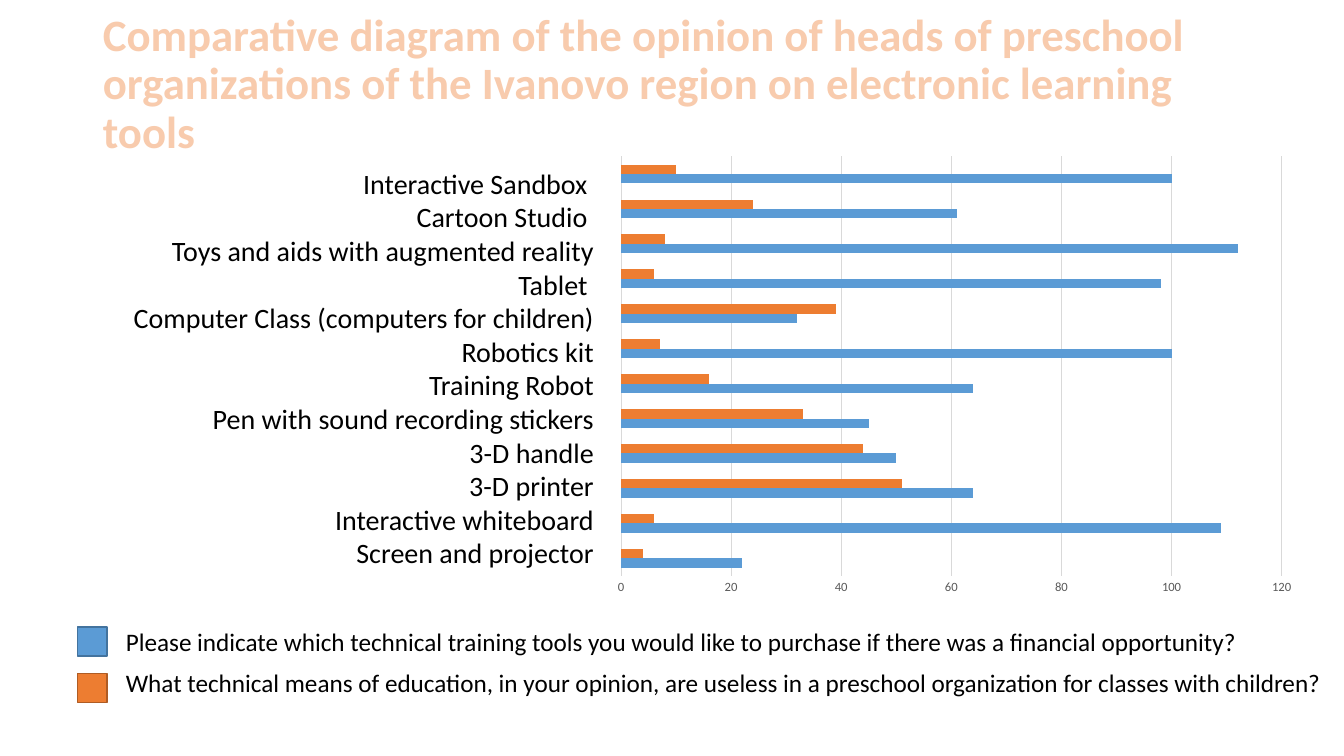
from lxml import etree
from pptx import Presentation
from pptx.chart.data import CategoryChartData
from pptx.dml.color import RGBColor
from pptx.enum.chart import XL_CHART_TYPE, XL_TICK_MARK
from pptx.enum.shapes import MSO_SHAPE
from pptx.enum.text import MSO_ANCHOR, MSO_AUTO_SIZE, PP_ALIGN
from pptx.oxml import parse_xml
from pptx.oxml.ns import nsdecls
from pptx.util import Inches, Pt

BARS = XL_CHART_TYPE.BAR_CLUSTERED
NO_TICKS = XL_TICK_MARK.NONE
SQUARE = MSO_SHAPE.RECTANGLE
MIDDLE = MSO_ANCHOR.MIDDLE
FIXED_SIZE = MSO_AUTO_SIZE.NONE
LEFT, RIGHT = PP_ALIGN.LEFT, PP_ALIGN.RIGHT

FONT = "Calibri"
COLORS = {
    "title": "F8CBAD", "text": "000000", "axis": "595959", "grid": "D9D9D9",
    "wanted": "5B9BD5", "wanted edge": "43739E",
    "useless": "ED7D31", "useless edge": "AF5C24",
}

# Tool, votes to purchase, votes as useless; top row first
TOOLS = [
    ("Interactive Sandbox ", 100, 10),
    ("Cartoon Studio ", 61, 24),
    ("Toys and aids with augmented reality", 112, 8),
    ("Tablet ", 98, 6),
    ("Computer Class (computers for children)", 32, 39),
    ("Robotics kit", 100, 7),
    ("Training Robot", 64, 16),
    ("Pen with sound recording stickers", 45, 33),
    ("3-D handle", 50, 44),
    ("3-D printer", 64, 51),
    ("Interactive whiteboard", 109, 6),
    ("Screen and projector", 22, 4),
]
# Series, question, top of its text, width of its text, top of its square
QUESTIONS = [
    ("wanted", "Please indicate which technical training tools you would like "
     "to purchase if there was a financial opportunity?", 6.16, 11.33, 6.22),
    ("useless", "What technical means of education, in your opinion, are useless "
     "in a preschool organization for classes with children?", 6.57, 12.18, 6.68),
]


def color(name):
    return RGBColor.from_string(COLORS[name])


def add_run(paragraph, text, size, color_name):
    run = paragraph.add_run()
    run.text = text
    run.font.name = FONT
    run.font.size = Pt(size)
    run.font.color.rgb = color(color_name)
    return run


prs = Presentation()
prs.slide_width, prs.slide_height = Inches(13.333), Inches(7.5)
slide = prs.slides.add_slide(prs.slide_layouts[5])

# Title
title = slide.shapes.title
title.left, title.top = Inches(0.92), Inches(0.4)
title.width, title.height = Inches(11.5), Inches(0.89)
title_frame = title.text_frame
title_frame.word_wrap = True
title_frame.auto_size = FIXED_SIZE
title_frame.vertical_anchor = MIDDLE
heading = title_frame.paragraphs[0]
heading.alignment = LEFT
heading.line_spacing = 0.9
heading_run = add_run(
    heading, "Comparative diagram of the opinion of heads of preschool organizations "
    "of the Ivanovo region on electronic learning tools", 32, "title")
heading_run.font.bold = True
outline = parse_xml(
    f'<a:ln {nsdecls("a")} w="{Pt(1.75)}"><a:solidFill>'
    f'<a:srgbClr val="{COLORS["useless"]}"/></a:solidFill></a:ln>')
heading_run.font._element.insert(0, outline)

# Chart: categories run from the bottom up
votes = CategoryChartData()
votes.categories = [str(n + 1) for n in range(len(TOOLS))]
votes.add_series("Series 1", [wanted for _, wanted, _ in reversed(TOOLS)])
votes.add_series("Series 2", [useless for _, _, useless in reversed(TOOLS)])
chart = slide.shapes.add_chart(
    BARS, Inches(5.99), Inches(1.46), Inches(6.96), Inches(4.53), votes).chart
chart.has_legend = False
chart.has_title = False
chart.font.name = FONT
chart.font.size = Pt(10)
chart.font.color.rgb = color("text")

plot = chart.plots[0]
plot.gap_width = 182
plot.vary_by_categories = False
for series, name in zip(plot.series, ("wanted", "useless")):
    series.format.fill.solid()
    series.format.fill.fore_color.rgb = color(name)

chart.category_axis.visible = False
vote_axis = chart.value_axis
vote_axis.minimum_scale, vote_axis.maximum_scale = 0, 120
vote_axis.major_unit = 20
vote_axis.major_tick_mark = vote_axis.minor_tick_mark = NO_TICKS
vote_axis.format.line.fill.background()
vote_axis.major_gridlines.format.line.color.rgb = color("grid")
vote_axis.major_gridlines.format.line.width = Pt(0.75)
vote_axis.tick_labels.font.name = FONT
vote_axis.tick_labels.font.size = Pt(9)
vote_axis.tick_labels.font.color.rgb = color("axis")

# Tool names beside the bars
names = slide.shapes.add_textbox(
    Inches(0.38), Inches(1.6), Inches(5.61), Inches(4.14)).text_frame
names.word_wrap = True
for row, (tool, _, _) in enumerate(TOOLS):
    line = names.add_paragraph() if row else names.paragraphs[0]
    line.alignment = RIGHT
    add_run(line, tool, 20, "text")

# Key with the two survey questions
for name, question, top, width, key_top in QUESTIONS:
    caption = slide.shapes.add_textbox(
        Inches(1.15), Inches(top), Inches(width), Inches(0.4)).text_frame
    caption.word_wrap = True
    add_run(caption.paragraphs[0], question, 18, "text")

    key = slide.shapes.add_shape(
        SQUARE, Inches(0.77), Inches(key_top), Inches(0.29), Inches(0.29))
    key.shadow.inherit = False
    key.fill.solid()
    key.fill.fore_color.rgb = color(name)
    key.line.color.rgb = color(f"{name} edge")
    key.line.width = Pt(1)

prs.save("out.pptx")
